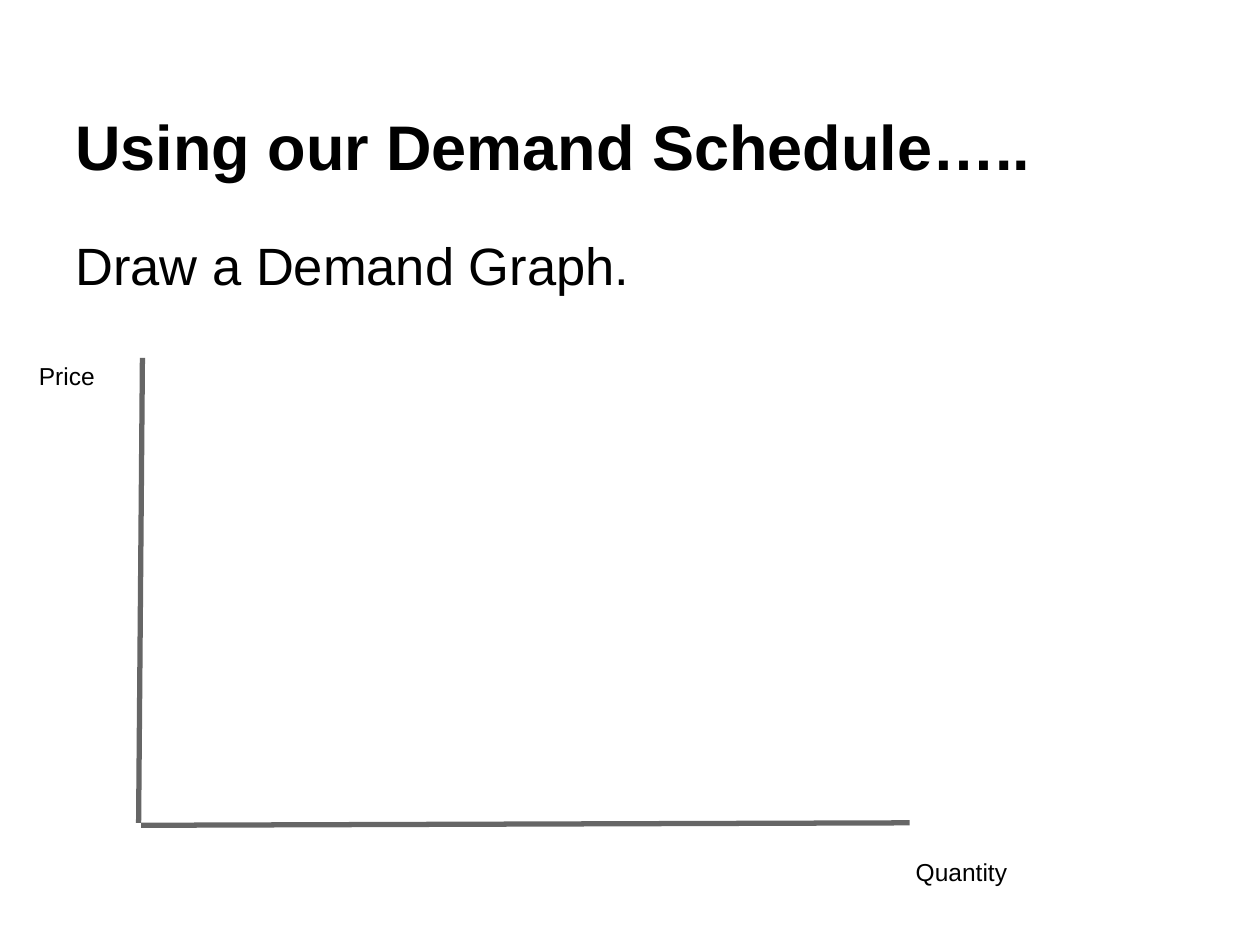
from lxml.etree import SubElement
from pptx import Presentation
from pptx.dml.color import RGBColor
from pptx.enum.shapes import MSO_CONNECTOR as Connector
from pptx.enum.text import MSO_ANCHOR as Anchor
from pptx.oxml.ns import qn
from pptx.util import Pt

COLORS = {"background": "FFFFFF", "text": "000000", "axis": "666666"}


class SlideBuilder:
    font = "Arial"
    inset = Pt(7.2)
    axis_width = Pt(3)

    def __init__(self, slide):
        self.slide = slide
        fill = slide.background.fill
        fill.solid()
        fill.fore_color.rgb = RGBColor.from_string(COLORS["background"])

    def text(self, words, left, top, width, height, size, bold=False, anchor=Anchor.TOP):
        box = self.slide.shapes.add_textbox(Pt(left), Pt(top), Pt(width), Pt(height))
        frame = box.text_frame
        frame.word_wrap = True
        frame.vertical_anchor = anchor
        frame.margin_left = frame.margin_right = self.inset
        frame.margin_top = frame.margin_bottom = self.inset
        paragraph = frame.paragraphs[0]
        paragraph.text = words
        paragraph.font.name = self.font
        paragraph.font.size = Pt(size)
        paragraph.font.bold = bold
        paragraph.font.color.rgb = RGBColor.from_string(COLORS["text"])

    def axis(self, x1, y1, x2, y2):
        line = self.slide.shapes.add_connector(
            Connector.STRAIGHT, Pt(x1), Pt(y1), Pt(x2), Pt(y2))
        line.line.width = self.axis_width
        line.line.color.rgb = RGBColor.from_string(COLORS["axis"])
        SubElement(line._element.spPr, qn("a:effectLst"))


def main():
    deck = Presentation()
    deck.slide_width, deck.slide_height = Pt(720), Pt(540)
    builder = SlideBuilder(deck.slides.add_slide(deck.slide_layouts[6]))

    builder.text("Using our Demand Schedule…..", 36, 21.6, 648, 90, 36,
                 bold=True, anchor=Anchor.BOTTOM)
    builder.text("Draw a Demand Graph.", 36, 126, 648, 391, 30)

    builder.axis(81.4, 204.5, 79.2, 470.2)
    builder.axis(80.6, 471.6, 519.8, 470.2)

    builder.text("Price", 15.1, 199.4, 51.8, 24.5, 14)
    builder.text("Quantity", 516.2, 482.4, 90, 20.2, 14)

    deck.save("out.pptx")


if __name__ == "__main__":
    main()
